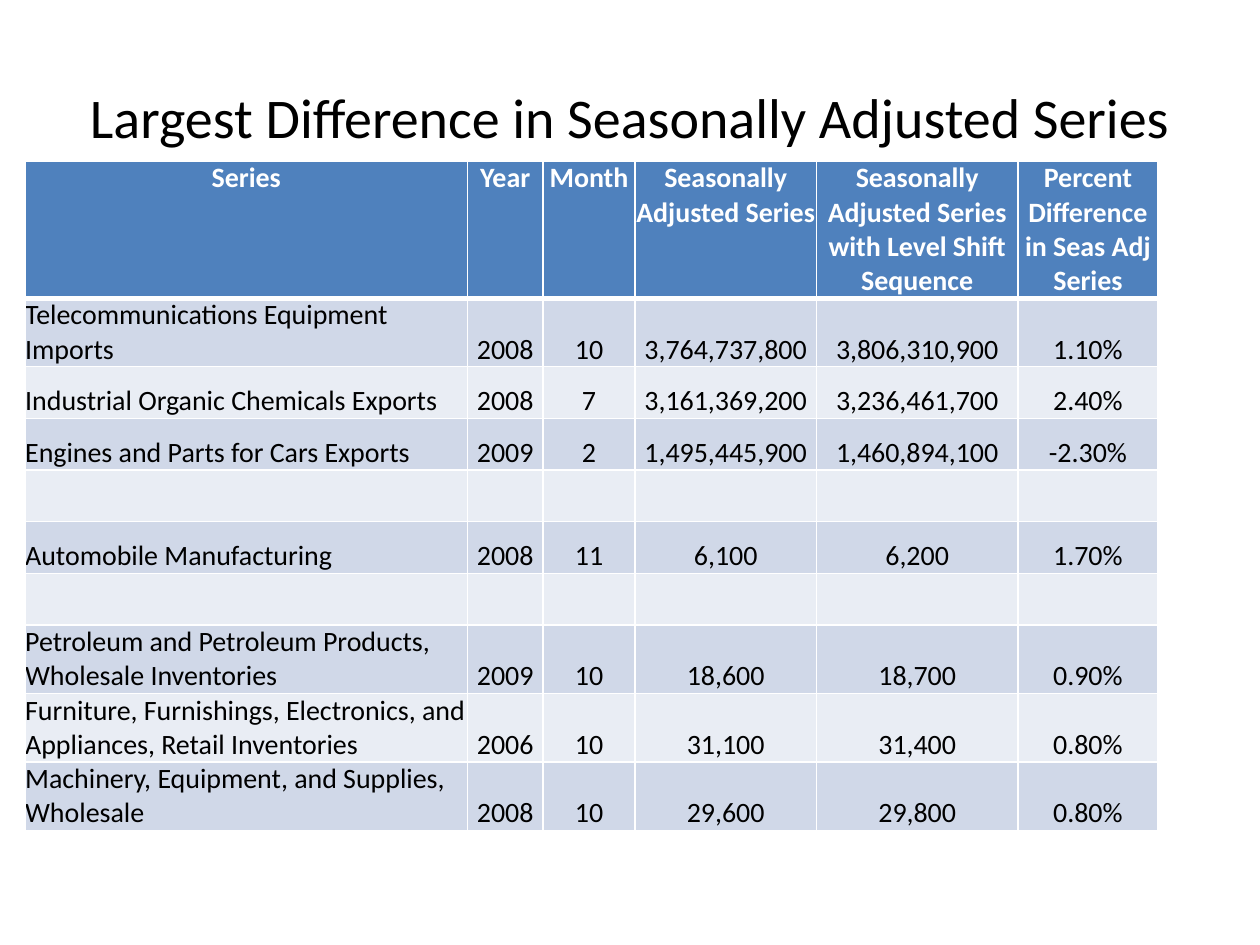
from lxml import etree
from pptx import Presentation
from pptx.dml.color import RGBColor
from pptx.enum import text
from pptx.oxml import ns
from pptx.util import Inches, Pt

FONT = "Calibri"
BLACK = RGBColor(0x00, 0x00, 0x00)
WHITE = RGBColor(0xFF, 0xFF, 0xFF)
HEADER = RGBColor(0x4F, 0x81, 0xBD)
BANDS = (RGBColor(0xE9, 0xED, 0xF4), RGBColor(0xD0, 0xD8, 0xE8))

COLUMN_WIDTHS = (3.51, 0.6, 0.73, 1.44, 1.6, 1.11)
ROW_HEIGHT = 0.41
ROWS = (
    ("Series", "Year", "Month", "Seasonally Adjusted Series",
     "Seasonally Adjusted Series with Level Shift Sequence",
     "Percent Difference in Seas Adj Series"),
    ("Telecommunications Equipment Imports", "2008", "10",
     "3,764,737,800", "3,806,310,900", "1.10%"),
    ("Industrial Organic Chemicals Exports", "2008", "7",
     "3,161,369,200", "3,236,461,700", "2.40%"),
    ("Engines and Parts for Cars Exports", "2009", "2",
     "1,495,445,900", "1,460,894,100", "-2.30%"),
    ("",) * 6,
    ("Automobile Manufacturing", "2008", "11", "6,100", "6,200", "1.70%"),
    ("",) * 6,
    ("Petroleum and Petroleum Products, Wholesale Inventories", "2009", "10",
     "18,600", "18,700", "0.90%"),
    ("Furniture, Furnishings, Electronics, and Appliances, Retail Inventories",
     "2006", "10", "31,100", "31,400", "0.80%"),
    ("Machinery, Equipment, and Supplies, Wholesale", "2008", "10",
     "29,600", "29,800", "0.80%"),
)


def format_font(font, size, color, bold=False):
    """Apply the slide's typeface with a size, colour and weight."""
    font.name, font.size, font.bold = FONT, Pt(size), bold
    font.color.rgb = color


def add_borders(cell, top, bottom):
    """Draw white cell borders, one point wide at the sides."""
    tcPr = cell._tc.get_or_add_tcPr()
    for side, width in (("L", 1), ("R", 1), ("T", top), ("B", bottom)):
        ln = etree.SubElement(tcPr, ns.qn(f"a:ln{side}"), w=str(Pt(width)))
        fill = etree.SubElement(ln, ns.qn("a:solidFill"))
        etree.SubElement(fill, ns.qn("a:srgbClr"), val=str(WHITE))


def fill_cell(cell, value, row, col):
    """Style one cell by its row and column and write its value."""
    is_header = row == 0
    add_borders(cell, 3 if row == 1 else 1, 3 if is_header else 1)
    cell.fill.solid()
    cell.fill.fore_color.rgb = HEADER if is_header else BANDS[row % 2]
    if not value:
        return
    cell.margin_left = cell.margin_right = 0
    cell.margin_top = cell.margin_bottom = 0
    cell.vertical_anchor = (text.MSO_ANCHOR.TOP if is_header
                            else text.MSO_ANCHOR.BOTTOM)
    cell.text_frame.text = value
    p = cell.text_frame.paragraphs[0]
    p.alignment = (text.PP_ALIGN.CENTER if is_header or col
                   else text.PP_ALIGN.LEFT)
    format_font(p.runs[0].font, 16, WHITE if is_header else BLACK, is_header)


def add_title(s, left, top, width, height):
    """Place and format the title placeholder."""
    sp = s.shapes.title
    sp.left, sp.top, sp.width, sp.height = left, top, width, height
    tf = sp.text_frame
    tf.text = "Largest Difference in Seasonally Adjusted Series"
    tf.vertical_anchor = text.MSO_ANCHOR.MIDDLE
    p = tf.paragraphs[0]
    p.alignment = text.PP_ALIGN.CENTER
    format_font(p.runs[0].font, 32, BLACK)


def add_series_table(s, left, top, width, height):
    """Place the table of series differences."""
    table = s.shapes.add_table(len(ROWS), len(COLUMN_WIDTHS),
                               left, top, width, height).table
    for column, column_width in zip(table.columns, COLUMN_WIDTHS):
        column.width = Inches(column_width)
    for i, values in enumerate(ROWS):
        table.rows[i].height = Inches(ROW_HEIGHT)
        for j, value in enumerate(values):
            fill_cell(table.cell(i, j), value, i, j)


def main():
    """Build the slide and save it."""
    prs = Presentation()
    prs.slide_width, prs.slide_height = Inches(10), Inches(7.5)
    s = prs.slides.add_slide(prs.slide_layouts[5])
    add_title(s, Inches(0.5), Inches(0.3), Inches(9), Inches(1.25))
    add_series_table(s, Inches(0.2), Inches(1.28), Inches(9),
                     Inches(ROW_HEIGHT * len(ROWS)))
    prs.save("out.pptx")


if __name__ == "__main__":
    main()
